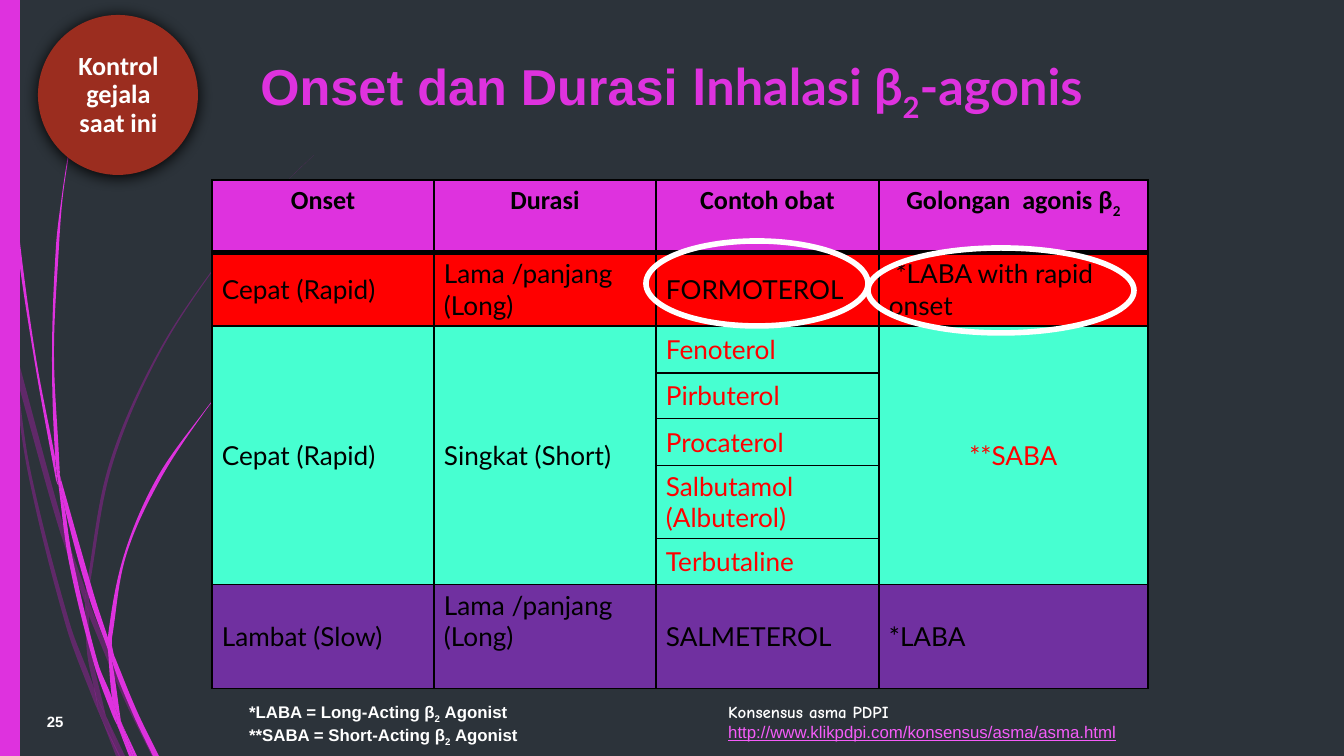
from dataclasses import dataclass

from lxml.etree import SubElement
from pptx import Presentation
from pptx.dml.color import RGBColor
from pptx.enum.shapes import MSO_SHAPE as Preset
from pptx.enum.text import MSO_ANCHOR as Anchor, PP_ALIGN as Align
from pptx.oxml.ns import qn
from pptx.util import Emu, Pt

SCALE = 914400 / 134.4
WIDTH, HEIGHT = 1344, 756
COLORS = {
    "night": "2C333A", "magenta": "DE32DE", "plum": "B01CB0", "white": "FFFFFF",
    "ink": "000000", "red": "FF0000", "mint": "47FFD1", "purple": "7030A0",
    "brick": "9B2D1F", "link": "F55CF9",
}
Points = list[tuple[int, int]]


@dataclass
class Blade:
    down: Points
    up: Points


@dataclass
class Box:
    left: int
    top: int
    width: int
    height: int

    def emu(self) -> list[Emu]:
        return [px(v) for v in (self.left, self.top, self.width, self.height)]


@dataclass
class Line:
    text: str
    size: int
    color: str = "white"
    font: str = "Arial"
    bold: bool = True
    underline: bool = False
    align: Align = Align.LEFT


@dataclass
class Entry:
    row: int
    col: int
    text: str
    fill: str
    color: str = "ink"
    rows: int = 1
    align: Align = Align.LEFT
    lift: int = 0


FAINT_BLADES = [
    Blade([(11, 353), (8, 324), (0, 284)], [(0, 301), (11, 347)]),
    Blade([(17, 379), (58, 525), (85, 603)], [(86, 591), (63, 524), (15, 348)]),
    Blade([(89, 616), (124, 699), (152, 756)], [(156, 756), (128, 698), (93, 612), (89, 601)]),
    Blade([(106, 716), (120, 756)], [(125, 756)]),
    Blade([(11, 353), (28, 473), (66, 626), (93, 699), (102, 720)],
          [(99, 712), (94, 688), (70, 624), (31, 473), (17, 379)]),
    Blade([(85, 603), (87, 652), (94, 688), (97, 698), (106, 716)],
          [(105, 712), (91, 650), (89, 616), (89, 613)]),
    Blade([(314, 155), (292, 176), (270, 199), (230, 246), (159, 351), (109, 465),
           (86, 589), (86, 591), (89, 601)],
          [(89, 589), (112, 466), (161, 351), (230, 247), (270, 199), (292, 176)]),
    Blade([(102, 720), (116, 756)], [(120, 756)]),
    Blade([(86, 591), (85, 603), (89, 613)], [(89, 616), (89, 601)]),
    Blade([(94, 688), (99, 712), (102, 720), (119, 756)], [(120, 756), (106, 716), (97, 698)]),
]
BRIGHT_BLADES = [
    Blade([(3, 0), (4, 48), (7, 110), (16, 235), (34, 358), (56, 480), (58, 485)],
          [(55, 461), (55, 457), (36, 358), (19, 234), (8, 110), (4, 48), (4, 0)]),
    Blade([(60, 476), (65, 509), (89, 597), (108, 650)], [(108, 638), (94, 595), (60, 476)]),
    Blade([(112, 646), (112, 661), (133, 714), (153, 756)], [(159, 756), (137, 711), (114, 655)]),
    Blade([(58, 481), (69, 562), (94, 664), (112, 714), (118, 727)],
          [(117, 723), (112, 698), (98, 663), (73, 560), (65, 509)]),
    Blade([(70, 142), (62, 195), (56, 246), (52, 352), (55, 453), (60, 476)],
          [(59, 457), (54, 352), (59, 246), (63, 195), (71, 142)]),
    Blade([(122, 724), (134, 756)], [(137, 756)]),
    Blade([(55, 453), (55, 457), (58, 481), (65, 509)], [(60, 476)]),
    Blade([(262, 347), (247, 362), (233, 376), (206, 409), (157, 478), (124, 555),
           (108, 636), (112, 646)],
          [(112, 638), (126, 556), (160, 480), (206, 410), (233, 378), (247, 362), (263, 347)]),
    Blade([(118, 727), (129, 756)], [(132, 756)]),
    Blade([(108, 650), (112, 698), (117, 712), (122, 724)], [(121, 722), (112, 661), (109, 656)]),
    Blade([(108, 636), (108, 650), (109, 656), (112, 661)], [(112, 646)]),
    Blade([(112, 698), (117, 723), (118, 727), (132, 756)], [(134, 756), (122, 724), (117, 712)]),
]

COLUMNS = [222, 222, 223, 269]
ROWS = [73, 72, 47, 46, 47, 73, 46, 104]
HEADINGS = ["Onset", "Durasi", "Contoh obat", "Golongan  agonis β2"]
RAPID_LONG = ["Cepat (Rapid)", "Lama /panjang (Long)", "FORMOTEROL", " *LABA with rapid onset"]
SHORT_DRUGS = ["Fenoterol", "Pirbuterol", "Procaterol", "Salbutamol (Albuterol)", "Terbutaline"]
ENTRIES = [
    *(Entry(0, c, t, "magenta", align=Align.CENTER) for c, t in enumerate(HEADINGS)),
    *(Entry(1, c, t, "red") for c, t in enumerate(RAPID_LONG)),
    Entry(2, 0, "Cepat (Rapid)", "mint", rows=5),
    Entry(2, 1, "Singkat (Short)", "mint", rows=5),
    *(Entry(r, 2, t, "mint", "red") for r, t in enumerate(SHORT_DRUGS, 2)),
    Entry(2, 3, "**SABA", "mint", "red", rows=5, align=Align.CENTER),
    Entry(7, 0, "Lambat (Slow)", "purple"),
    Entry(7, 1, "Lama /panjang (Long)", "purple", lift=31),
    Entry(7, 2, "SALMETEROL", "purple"),
    Entry(7, 3, "*LABA", "purple"),
]


def px(length: float) -> Emu:
    return Emu(round(length * SCALE))


def rgb(name: str) -> RGBColor:
    return RGBColor.from_string(COLORS[name])


def paint(shape, name: str) -> None:
    shape.shadow.inherit = False
    shape.fill.solid()
    shape.fill.fore_color.rgb = rgb(name)
    shape.line.fill.background()


def bend(outline, breaks: int) -> None:
    steps = outline.findall(qn("a:lnTo"))
    spots = [complex(int(p.get("x")), int(p.get("y"))) for p in outline.iter(qn("a:pt"))]
    edges = [spots[:breaks], spots[breaks:]]
    for edge, moves in zip(edges, [steps[:breaks - 1], steps[breaks:]]):
        ends = [edge[0], *edge, edge[-1]]
        for i, move in enumerate(moves):
            before, start, stop, after = ends[i:i + 4]
            reach = abs(stop - start) / 3
            leave, arrive = stop - before, after - start
            handles = [start + leave / abs(leave) * reach, stop - arrive / abs(arrive) * reach]
            move.clear()
            move.tag = qn("a:cubicBezTo")
            for spot in [*handles, stop]:
                SubElement(move, qn("a:pt"), x=str(round(spot.real)), y=str(round(spot.imag)))


def draw_blade(slide, blade: Blade, color: str, opacity: int = 100) -> None:
    corners = [(px(x), px(y)) for x, y in blade.down + blade.up]
    builder = slide.shapes.build_freeform(*corners[0], scale=1.0)
    builder.add_line_segments(corners[1:], close=True)
    shape = builder.convert_to_shape()
    paint(shape, color)
    bend(next(shape._element.iter(qn("a:path"))), len(blade.down))
    if opacity < 100:
        tint = shape._element.spPr.find(qn("a:solidFill"))[0]
        SubElement(tint, qn("a:alpha"), val=str(opacity * 1000))


def write(paragraph, line: Line) -> None:
    paragraph.alignment = line.align
    font = paragraph.font
    font.size, font.bold, font.name = Pt(line.size), line.bold, line.font
    font.underline = line.underline
    font.color.rgb = rgb(line.color)
    before, beta, after = line.text.partition("β2")
    paragraph.add_run().text = before + beta[:1]
    if beta:
        digit = paragraph.add_run()
        digit.text = "2"
        digit._r.get_or_add_rPr().set("baseline", "-25000")
    if after:
        paragraph.add_run().text = after


def set_margins(frame, sides: int, ends: int) -> None:
    frame.margin_left = frame.margin_right = px(sides)
    frame.margin_top = frame.margin_bottom = px(ends)


def add_text(slide, box: Box, lines: list[Line], wrap: bool = False):
    frame = slide.shapes.add_textbox(*box.emu()).text_frame
    frame.word_wrap = wrap
    for i, line in enumerate(lines):
        write(frame.add_paragraph() if i else frame.paragraphs[0], line)
    return frame


def border(cell, row: int) -> None:
    properties = cell._tc.get_or_add_tcPr()
    heavy = {0: "lnB", 1: "lnT"}.get(row)
    for side in ("lnL", "lnR", "lnT", "lnB"):
        edge = SubElement(properties, qn(f"a:{side}"), w=str(Pt(3 if side == heavy else 1)))
        SubElement(SubElement(edge, qn("a:solidFill")), qn("a:srgbClr"), val=COLORS["ink"])


def draw_table(slide) -> None:
    box = Box(212, 180, sum(COLUMNS), sum(ROWS))
    table = slide.shapes.add_table(len(ROWS), len(COLUMNS), *box.emu()).table
    table.first_row = table.horz_banding = False
    for column, width in zip(table.columns, COLUMNS):
        column.width = px(width)
    for row, height in zip(table.rows, ROWS):
        row.height = px(height)
    for entry in ENTRIES:
        for row in range(entry.row, entry.row + entry.rows):
            part = table.cell(row, entry.col)
            border(part, row)
            part.fill.solid()
            part.fill.fore_color.rgb = rgb(entry.fill)
        cell = table.cell(entry.row, entry.col)
        if entry.rows > 1:
            cell.merge(table.cell(entry.row + entry.rows - 1, entry.col))
        heading = entry.row == 0
        cell.vertical_anchor = Anchor.TOP if heading else Anchor.MIDDLE
        set_margins(cell, 10, 5)
        cell.margin_bottom = px(5 + entry.lift)
        write(cell.text_frame.paragraphs[0],
              Line(entry.text, 14, entry.color, "Calibri" if heading else "Lato",
                   heading, align=entry.align))


def draw_ring(slide, box: Box) -> None:
    ring = slide.shapes.add_shape(Preset.OVAL, *box.emu())
    ring.shadow.inherit = False
    ring.fill.background()
    ring.line.color.rgb = rgb("white")
    ring.line.width = Pt(3)


def draw_badge(slide) -> None:
    badge = slide.shapes.add_shape(Preset.OVAL, *Box(38, 15, 160, 160).emu())
    paint(badge, "brick")
    effects = badge._element.spPr.find(qn("a:effectLst"))
    shadow = SubElement(effects, qn("a:outerShdw"), blurRad=str(Pt(8.5)),
                        dist=str(Pt(1)), dir="5400000")
    SubElement(shadow, qn("a:srgbClr"), val=COLORS["ink"])
    label = add_text(slide, Box(62, 39, 113, 113), [
        Line("Kontrol gejala saat ini", 14, font="Calibri", align=Align.CENTER)], wrap=True)
    label.vertical_anchor = Anchor.MIDDLE
    set_margins(label, 3, 3)
    label.paragraphs[0].line_spacing = 0.9


def main() -> None:
    deck = Presentation()
    deck.slide_width, deck.slide_height = px(WIDTH), px(HEIGHT)
    slide = deck.slides.add_slide(deck.slide_layouts[6])
    slide.background.fill.solid()
    slide.background.fill.fore_color.rgb = rgb("night")
    for blade in FAINT_BLADES:
        draw_blade(slide, blade, "plum", 40)
    for blade in BRIGHT_BLADES:
        draw_blade(slide, blade, "magenta")
    paint(slide.shapes.add_shape(Preset.RECTANGLE, *Box(0, 0, 20, HEIGHT).emu()), "magenta")
    set_margins(add_text(slide, Box(47, 713, 58, 24), [Line("25", 8)]), 0, 0)
    draw_table(slide)
    title = add_text(slide, Box(191, 23, 961, 133), [
        Line("Onset dan Durasi ", 27, "magenta", align=Align.CENTER)], wrap=True)
    title.vertical_anchor = Anchor.MIDDLE
    topic = title.paragraphs[0]
    write(topic, Line("Inhalasi β2-agonis", 27, "magenta", align=Align.CENTER))
    for run, name in zip(topic.runs, ["Arial", "Lato", "Lato", "Lato"]):
        run.font.name = name
    add_text(slide, Box(236, 695, 300, 75), [
        Line("*LABA = Long-Acting β2 Agonist", 9),
        Line("**SABA = Short-Acting β2 Agonist", 9)])
    add_text(slide, Box(715, 695, 419, 95), [
        Line("Konsensus asma PDPI", 9, font="Comic Neue"),
        Line("http://www.klikpdpi.com/konsensus/asma/asma.html", 9, "link",
             bold=False, underline=True)])
    draw_ring(slide, Box(646, 241, 222, 85))
    draw_badge(slide)
    draw_ring(slide, Box(868, 248, 266, 85))
    deck.save("out.pptx")


if __name__ == "__main__":
    main()
